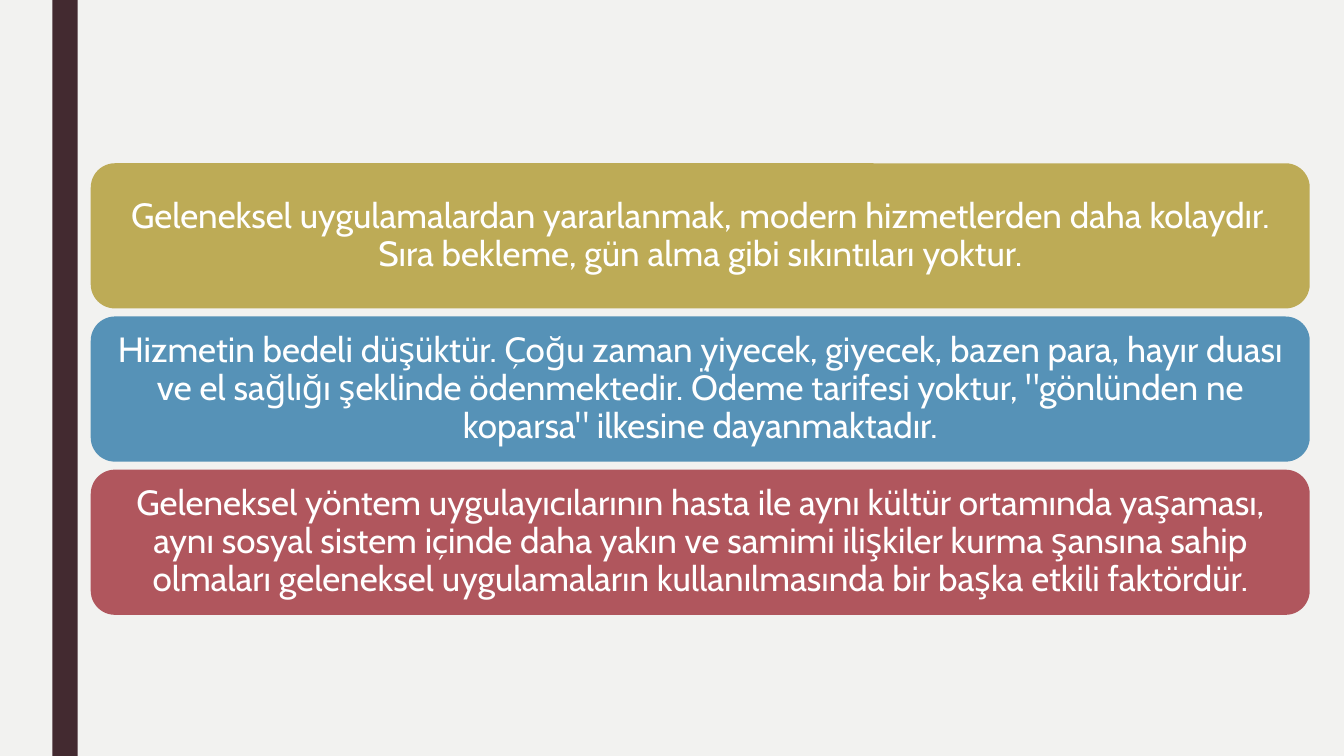
from dataclasses import dataclass

from pptx import Presentation
from pptx.dml.color import RGBColor
from pptx.enum.shapes import MSO_SHAPE
from pptx.enum.text import MSO_ANCHOR, PP_ALIGN
from pptx.util import Inches, Pt

REASONS = [
    "Geleneksel uygulamalardan yararlanmak, modern hizmetlerden daha kolaydır. "
    "Sıra bekleme, gün alma gibi sıkıntıları yoktur.",
    "Hizmetin bedeli düşüktür. Çoğu zaman yiyecek, giyecek, bazen para, hayır duası "
    "ve el sağlığı şeklinde ödenmektedir. Ödeme tarifesi yoktur, \"gönlünden ne "
    "koparsa\" ilkesine dayanmaktadır.",
    "Geleneksel yöntem uygulayıcılarının hasta ile aynı kültür ortamında yaşaması, "
    "aynı sosyal sistem içinde daha yakın ve samimi ilişkiler kurma şansına sahip "
    "olmaları geleneksel uygulamaların kullanılmasında bir başka etkili faktördür.",
]


@dataclass(frozen=True)
class Theme:
    background: str = "F2F2F0"
    stripe: str = "432A30"
    cards: tuple = ("BDAB56", "5692B7", "B0565D")
    text: str = "FFFFFF"
    font: str = "Cabin"
    size: int = 25


THEME = Theme()
SLIDE_WIDTH, SLIDE_HEIGHT = 13.33, 7.5
STRIPE_LEFT, STRIPE_WIDTH = 0.52, 0.25
CARD_LEFT, CARD_TOP = 0.9, 1.62
CARD_WIDTH, CARD_HEIGHT = 12.09, 1.44
ROW_STEP = CARD_HEIGHT + 0.08
CARD_INSET = Inches(0.1)


def add_block(slide, kind, left, top, width, height, color):
    """Add a flat filled shape, measured in inches."""
    shape = slide.shapes.add_shape(
        kind, Inches(left), Inches(top), Inches(width), Inches(height))
    shape.shadow.inherit = False
    shape.fill.solid()
    shape.fill.fore_color.rgb = RGBColor.from_string(color)
    shape.line.fill.background()
    return shape


def add_card(slide, row, text, color):
    card = add_block(slide, MSO_SHAPE.ROUNDED_RECTANGLE, CARD_LEFT,
                     CARD_TOP + row * ROW_STEP, CARD_WIDTH, CARD_HEIGHT, color)
    frame = card.text_frame
    frame.word_wrap = True
    frame.vertical_anchor = MSO_ANCHOR.MIDDLE
    frame.margin_left = frame.margin_right = CARD_INSET
    frame.margin_top = frame.margin_bottom = CARD_INSET
    paragraph = frame.paragraphs[0]
    paragraph.text = text
    paragraph.alignment = PP_ALIGN.CENTER
    paragraph.line_spacing = 0.9
    paragraph.font.name = THEME.font
    paragraph.font.size = Pt(THEME.size)
    paragraph.font.color.rgb = RGBColor.from_string(THEME.text)


def main():
    presentation = Presentation()
    presentation.slide_width = Inches(SLIDE_WIDTH)
    presentation.slide_height = Inches(SLIDE_HEIGHT)
    slide = presentation.slides.add_slide(presentation.slide_layouts[6])
    slide.background.fill.solid()
    slide.background.fill.fore_color.rgb = RGBColor.from_string(THEME.background)

    add_block(slide, MSO_SHAPE.RECTANGLE, STRIPE_LEFT, 0,
              STRIPE_WIDTH, SLIDE_HEIGHT, THEME.stripe)
    for row, (text, color) in enumerate(zip(REASONS, THEME.cards)):
        add_card(slide, row, text, color)

    presentation.save("out.pptx")


if __name__ == "__main__":
    main()
